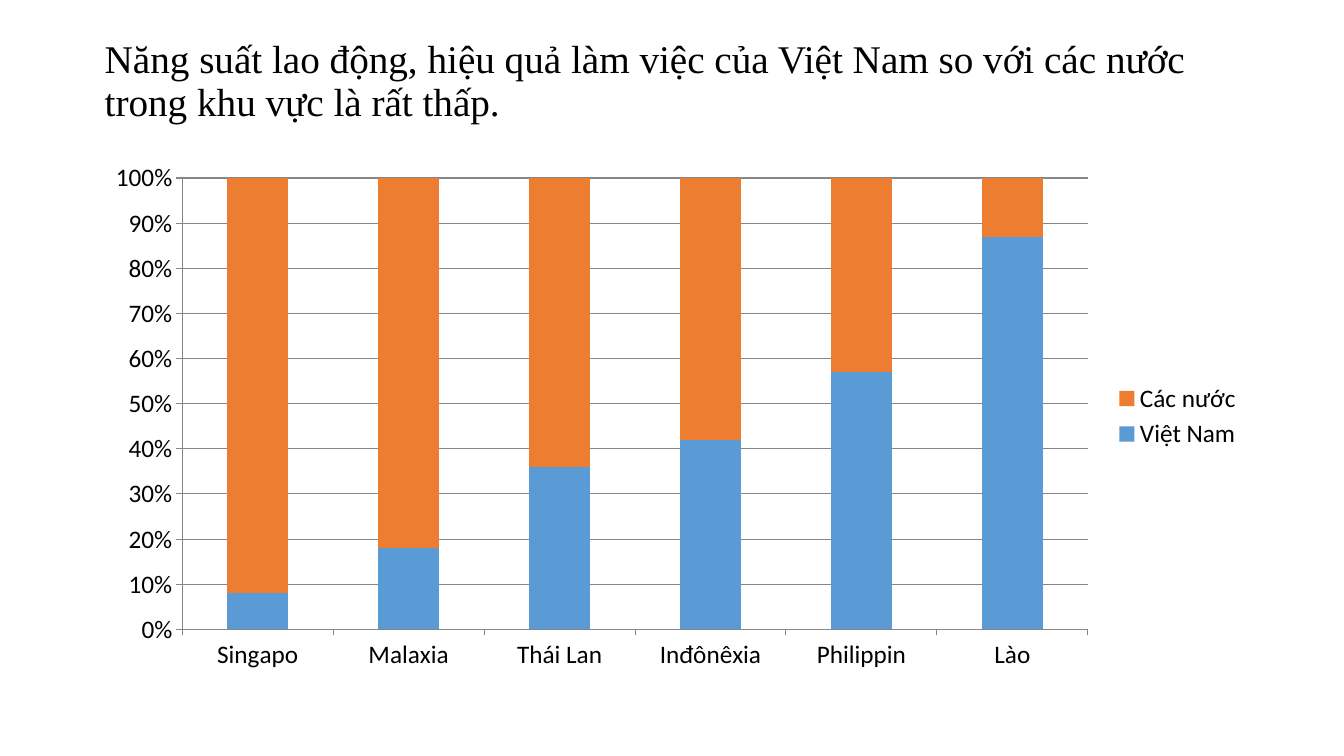
"""Build a slide comparing Vietnam's labour productivity with its neighbours."""
from dataclasses import dataclass

from pptx import Presentation
from pptx import util as u
from pptx.chart.data import CategoryChartData
from pptx.dml.color import RGBColor
from pptx.enum import chart as ch
from pptx.enum import text

PX = 9144
BLACK = RGBColor(0x00, 0x00, 0x00)
BLUE = RGBColor(0x5B, 0x9B, 0xD5)
ORANGE = RGBColor(0xED, 0x7D, 0x31)
GREY = RGBColor(0x86, 0x86, 0x86)
TITLE = ("Năng suất lao động, hiệu quả làm việc của Việt Nam so với các nước "
         "trong khu vực là rất thấp.")
COUNTRIES = ("Singapo", "Malaxia", "Thái Lan", "Inđônêxia", "Philippin", "Lào")


@dataclass(frozen=True)
class Box:
    """Position and size in px, 100 to the inch."""
    left: int
    top: int
    width: int
    height: int

    def emu(self) -> tuple[int, ...]:
        """Return the four lengths in EMU."""
        return tuple(n * PX for n in (self.left, self.top, self.width, self.height))


@dataclass(frozen=True)
class Share:
    """One stacked series of percentages."""
    name: str
    values: tuple[int, ...]
    color: RGBColor


VIETNAM = (8, 18, 36, 42, 57, 87)
SHARES = (
    Share("Việt Nam", VIETNAM, BLUE),
    Share("Các nước", tuple(100 - v for v in VIETNAM), ORANGE),
)


def add_title(slide, box: Box, words: str) -> None:
    """Add the heading."""
    tf = slide.shapes.add_textbox(*box.emu()).text_frame
    tf.word_wrap = True
    tf.vertical_anchor = text.MSO_ANCHOR.MIDDLE
    tf.text = words
    p = tf.paragraphs[0]
    p.line_spacing = 0.9
    font = p.runs[0].font
    font.name, font.size = "Times New Roman", u.Pt(28)
    font.color.rgb = BLACK


def add_share_chart(slide, box: Box, shares: tuple[Share, ...]) -> None:
    """Add the 100% stacked column chart."""
    data = CategoryChartData()
    data.categories = COUNTRIES
    for share in shares:
        data.add_series(share.name, share.values)
    chart = slide.shapes.add_chart(
        ch.XL_CHART_TYPE.COLUMN_STACKED_100, *box.emu(), data).chart
    chart.has_title = False
    chart.font.name, chart.font.size = "Calibri", u.Pt(18)
    chart.font.color.rgb = BLACK
    chart.has_legend = True
    chart.legend.position = ch.XL_LEGEND_POSITION.RIGHT
    chart.legend.include_in_layout = False

    plot = chart.plots[0]
    plot.gap_width, plot.overlap = 150, 100
    plot.vary_by_categories = False
    for series, share in zip(plot.series, shares):
        series.format.fill.solid()
        series.format.fill.fore_color.rgb = share.color

    value_axis = chart.value_axis
    value_axis.minimum_scale, value_axis.maximum_scale = 0, 1
    value_axis.major_unit = 0.1
    value_axis.has_major_gridlines = True
    value_axis.tick_labels.number_format = "0%"
    value_axis.tick_labels.number_format_is_linked = False
    for axis in (chart.category_axis, value_axis):
        axis.major_tick_mark = ch.XL_TICK_MARK.OUTSIDE
        axis.minor_tick_mark = ch.XL_TICK_MARK.NONE
    for part in (chart.category_axis, value_axis, value_axis.major_gridlines):
        part.format.line.color.rgb = GREY
        part.format.line.width = u.Pt(0.75)


def main() -> None:
    """Create and save the presentation."""
    prs = Presentation()
    prs.slide_width, prs.slide_height = 1333 * PX, 750 * PX
    slide = prs.slides.add_slide(prs.slide_layouts[6])
    add_title(slide, Box(94, 9, 1150, 145), TITLE)
    add_share_chart(slide, Box(92, 151, 1150, 524), SHARES)
    prs.save("out.pptx")


if __name__ == "__main__":
    main()
